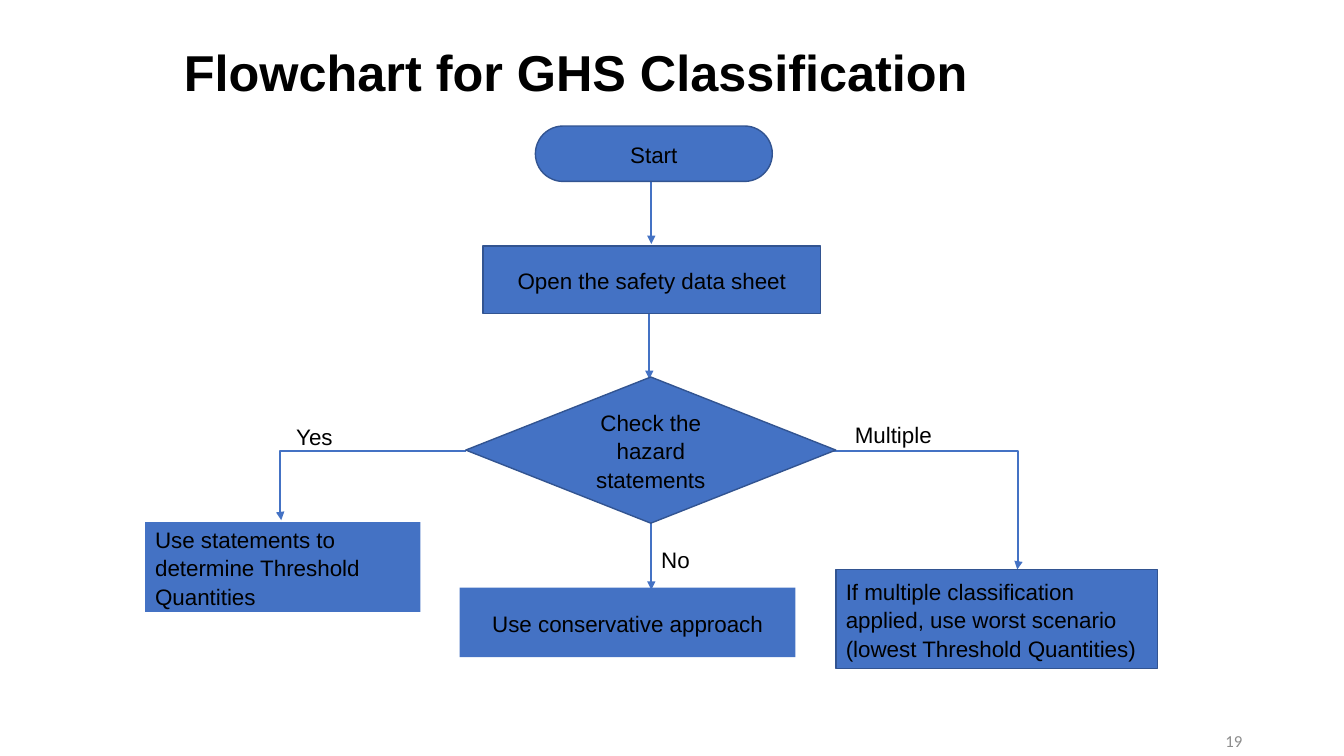
from lxml import etree
from pptx import Presentation
from pptx.dml.color import RGBColor
from pptx.enum.shapes import MSO_CONNECTOR, MSO_SHAPE
from pptx.enum.text import MSO_ANCHOR, PP_ALIGN
from pptx.oxml.ns import qn
from pptx.util import Inches, Pt

BLUE = RGBColor(0x44, 0x72, 0xC4)
DARK_BLUE = RGBColor(0x32, 0x54, 0x91)
BLACK = RGBColor(0, 0, 0)
GRAY = RGBColor(0x8C, 0x8C, 0x8C)


def set_text(shape, text, size=16, font="Arial", color=BLACK, bold=False,
             align=PP_ALIGN.LEFT, anchor=MSO_ANCHOR.MIDDLE, spacing=1.07):
    frame = shape.text_frame
    frame.word_wrap = True
    frame.vertical_anchor = anchor
    paragraph = frame.paragraphs[0]
    paragraph.text = text
    paragraph.alignment = align
    paragraph.line_spacing = spacing
    paragraph.font.size = Pt(size)
    paragraph.font.name = font
    paragraph.font.bold = bold
    paragraph.font.color.rgb = color


def add_label(slide, box, text, **style):
    label = slide.shapes.add_textbox(*map(Inches, box))
    set_text(label, text, **style)
    return label


def add_step(slide, kind, box, text, align=PP_ALIGN.CENTER, outlined=True):
    step = slide.shapes.add_shape(kind, *map(Inches, box))
    step.shadow.inherit = False
    step.fill.solid()
    step.fill.fore_color.rgb = BLUE
    if outlined:
        step.line.color.rgb = DARK_BLUE
        step.line.width = Pt(1)
    else:
        step.line.fill.background()
    set_text(step, text, align=align)
    return step


def add_arrow(slide, start, end, bend=None):
    """Draw a straight arrow, or an elbow one that turns at the share bend of its width."""
    kind = MSO_CONNECTOR.ELBOW if bend else MSO_CONNECTOR.STRAIGHT
    arrow = slide.shapes.add_connector(kind, *map(Inches, (*start, *end)))
    arrow.line.color.rgb = BLUE
    arrow.line.width = Pt(1.5)
    properties = arrow._element.spPr
    etree.SubElement(properties.find(qn("a:ln")), qn("a:tailEnd"), type="triangle")
    etree.SubElement(properties, qn("a:effectLst"))
    if bend:
        adjustments = properties.find(qn("a:prstGeom")).get_or_add_avLst()
        etree.SubElement(adjustments, qn("a:gd"), name="adj1",
                         fmla=f"val {round(bend * 100000)}")


def main():
    presentation = Presentation()
    presentation.slide_width = Inches(13.33)
    presentation.slide_height = Inches(7.5)
    slide = presentation.slides.add_slide(presentation.slide_layouts[6])

    # Title and slide number
    title = add_label(slide, (0.63, 0.26, 10.31, 0.98), "Flowchart for GHS Classification",
                      size=36, bold=True, align=PP_ALIGN.CENTER, spacing=0.9)
    title.text_frame.margin_right = Inches(0.24)
    add_label(slide, (9.42, 7.15, 3, 0.4), "19", size=12, font="Calibri",
              color=GRAY, align=PP_ALIGN.RIGHT, spacing=1)

    # Arrows into the main steps and out of the decision
    add_arrow(slide, (6.46, 1.77), (6.46, 2.42))
    add_arrow(slide, (6.44, 3.12), (6.44, 3.76))
    add_arrow(slide, (6.46, 5.19), (6.46, 5.85))
    add_arrow(slide, (4.62, 4.47), (2.79, 5.16), bend=1.005)
    add_arrow(slide, (8.26, 4.47), (10.09, 5.65), bend=1.006)

    # Main steps
    start = add_step(slide, MSO_SHAPE.ROUNDED_RECTANGLE, (5.31, 1.25, 2.35, 0.55), "Start")
    start.adjustments[0] = 0.5
    add_step(slide, MSO_SHAPE.RECTANGLE, (4.79, 2.44, 3.35, 0.67),
             "Open the safety data sheet")
    add_step(slide, MSO_SHAPE.FLOWCHART_DECISION, (4.62, 3.74, 3.67, 1.45),
             "Check the hazard statements")

    # Outcomes
    add_step(slide, MSO_SHAPE.RECTANGLE, (1.44, 5.18, 2.73, 0.89),
             "Use statements to determine Threshold Quantities",
             align=PP_ALIGN.LEFT, outlined=False)
    add_step(slide, MSO_SHAPE.RECTANGLE, (4.56, 5.83, 3.33, 0.69),
             "Use conservative approach", outlined=False)
    add_step(slide, MSO_SHAPE.RECTANGLE, (8.29, 5.65, 3.19, 0.98),
             "If multiple classification applied, use worst scenario "
             "(lowest Threshold Quantities)", align=PP_ALIGN.LEFT)

    # Branch labels
    for text, left, top in (("Yes", 2.84, 4.13), ("Multiple", 8.38, 4.11), ("No", 6.46, 5.35)):
        add_label(slide, (left, top, 1.54, 0.45), text, anchor=MSO_ANCHOR.TOP)

    presentation.save("out.pptx")


if __name__ == "__main__":
    main()
